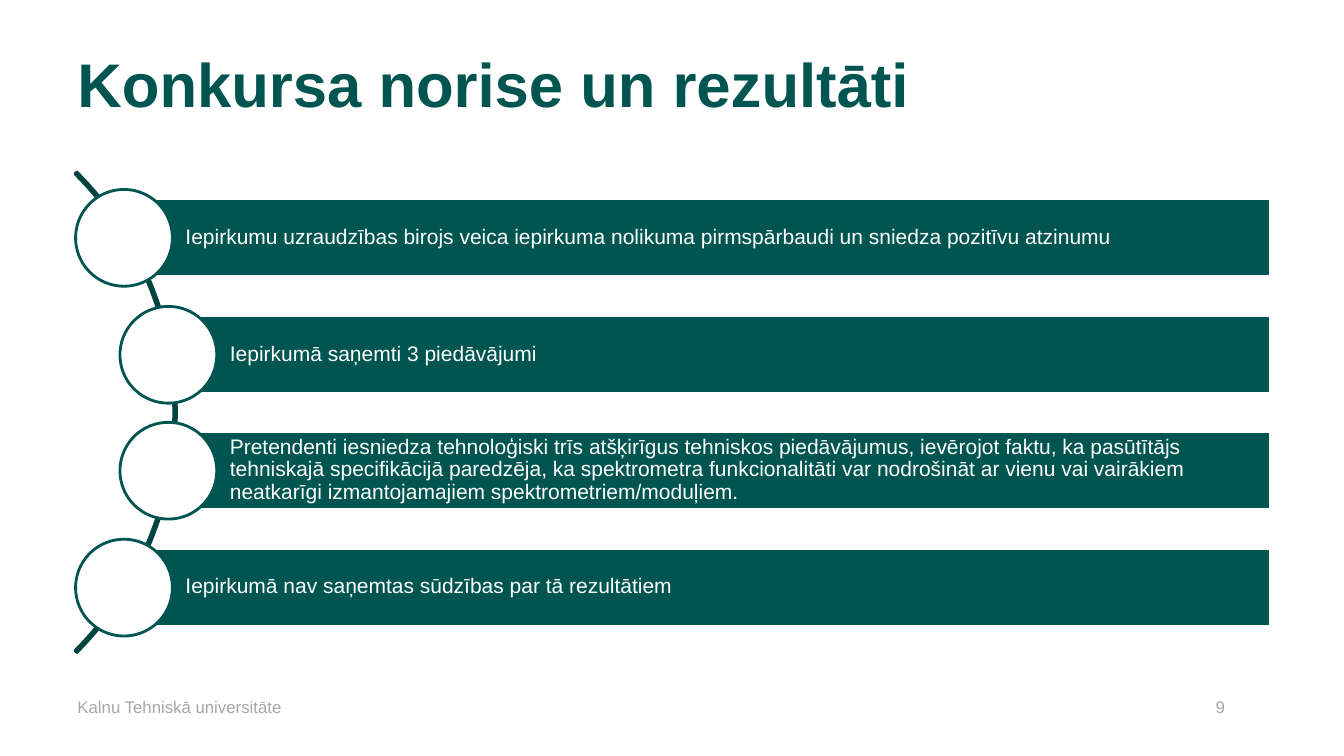
from dataclasses import dataclass

from pptx import Presentation
from pptx.dml.color import RGBColor
from pptx.enum.shapes import MSO_SHAPE
from pptx.enum.text import MSO_ANCHOR, PP_ALIGN
from pptx.shapes.autoshape import Shape
from pptx.slide import Slide
from pptx.util import Pt

SCALE = 9144  # EMU per px, 100 px to the inch


@dataclass(frozen=True)
class Theme:
    font: str = "Arial"
    green: str = "005551"
    dark: str = "004441"
    white: str = "FFFFFF"
    grey: str = "A6A6A6"
    title: int = 44
    body: int = 15
    small: int = 12
    line: int = 2


@dataclass(frozen=True)
class Box:
    left: int
    top: int
    width: int
    height: int

    def emu(self) -> list[int]:
        return [n * SCALE for n in (self.left, self.top, self.width, self.height)]


@dataclass(frozen=True)
class Step:
    left: int
    text: str


@dataclass(frozen=True)
class Label:
    box: Box
    text: str
    size: int
    color: str
    bold: bool = False
    anchor: MSO_ANCHOR = MSO_ANCHOR.TOP


THEME = Theme()
RIGHT, FIRST, SPAN = 1260, 197, 347
BAR, DISC = 77, 96
ARC = Box(-499, 72, 674, 674)
ANGLES = (189, 27, 0.004)
INSETS = {"margin_left": 61, "margin_top": 4, "margin_right": 4, "margin_bottom": 4}

LABELS = [
    Label(Box(67, 40, 1200, 84), "Konkursa norise un rezultāti",
          THEME.title, THEME.green, True, MSO_ANCHOR.MIDDLE),
    Label(Box(67, 686, 360, 40), "Kalnu Tehniskā universitāte", THEME.small, THEME.grey),
    Label(Box(1196, 686, 70, 40), "9", THEME.small, THEME.grey),
]
STEPS = [
    Step(123, "Iepirkumu uzraudzības birojs veica iepirkuma nolikuma pirmspārbaudi "
              "un sniedza pozitīvu atzinumu"),
    Step(167, "Iepirkumā saņemti 3 piedāvājumi"),
    Step(167, "Pretendenti iesniedza tehnoloģiski trīs atšķirīgus tehniskos piedāvājumus, "
              "ievērojot faktu, ka pasūtītājs tehniskajā specifikācijā paredzēja, ka "
              "spektrometra funkcionalitāti var nodrošināt ar vienu vai vairākiem "
              "neatkarīgi izmantojamajiem spektrometriem/moduļiem."),
    Step(123, "Iepirkumā nav saņemtas sūdzības par tā rezultātiem"),
]


def assign(target: object, values: dict) -> None:
    for name, value in values.items():
        setattr(target, name, value)


def write(shape: Shape, text: str, size: int, color: str,
          bold: bool = False, anchor: MSO_ANCHOR = MSO_ANCHOR.MIDDLE) -> None:
    frame = shape.text_frame
    assign(frame, {"text": text, "word_wrap": True, "vertical_anchor": anchor})
    para = frame.paragraphs[0]
    para.alignment = PP_ALIGN.LEFT
    font = para.runs[0].font
    assign(font, {"name": THEME.font, "size": Pt(size), "bold": bold})
    font.color.rgb = RGBColor.from_string(color)


def draw(slide: Slide, kind: MSO_SHAPE, box: Box, line: str, fill: str = "") -> Shape:
    """Add a preset shape; an empty fill leaves it hollow."""
    shape = slide.shapes.add_shape(kind, *box.emu())
    shape.shadow.inherit = False
    if fill:
        shape.fill.solid()
        shape.fill.fore_color.rgb = RGBColor.from_string(fill)
    else:
        shape.fill.background()
    shape.line.width = Pt(THEME.line)
    shape.line.color.rgb = RGBColor.from_string(line)
    return shape


def add_step(slide: Slide, step: Step, top: int) -> None:
    """Add a bar with a disc centred on its left edge."""
    bar = draw(slide, MSO_SHAPE.RECTANGLE,
               Box(step.left, top, RIGHT - step.left, BAR), THEME.white, THEME.green)
    write(bar, step.text, THEME.body, THEME.white)
    assign(bar.text_frame, {name: n * SCALE for name, n in INSETS.items()})
    bar.text_frame.paragraphs[0].line_spacing = 0.9
    disc = Box(step.left - DISC // 2, top - (DISC - BAR) // 2, DISC, DISC)
    draw(slide, MSO_SHAPE.OVAL, disc, THEME.green, THEME.white)


def main() -> None:
    deck = Presentation()
    assign(deck, {"slide_width": 1333 * SCALE, "slide_height": 750 * SCALE})
    slide = deck.slides.add_slide(deck.slide_layouts[6])
    for label in LABELS:
        shape = slide.shapes.add_textbox(*label.box.emu())
        write(shape, label.text, label.size, label.color, label.bold, label.anchor)
    arc = draw(slide, MSO_SHAPE.BLOCK_ARC, ARC, THEME.dark)
    for i, angle in enumerate(ANGLES):
        arc.adjustments[i] = angle
    for i, step in enumerate(STEPS):
        add_step(slide, step, FIRST + round(i * SPAN / (len(STEPS) - 1)))
    deck.save("out.pptx")


if __name__ == "__main__":
    main()
